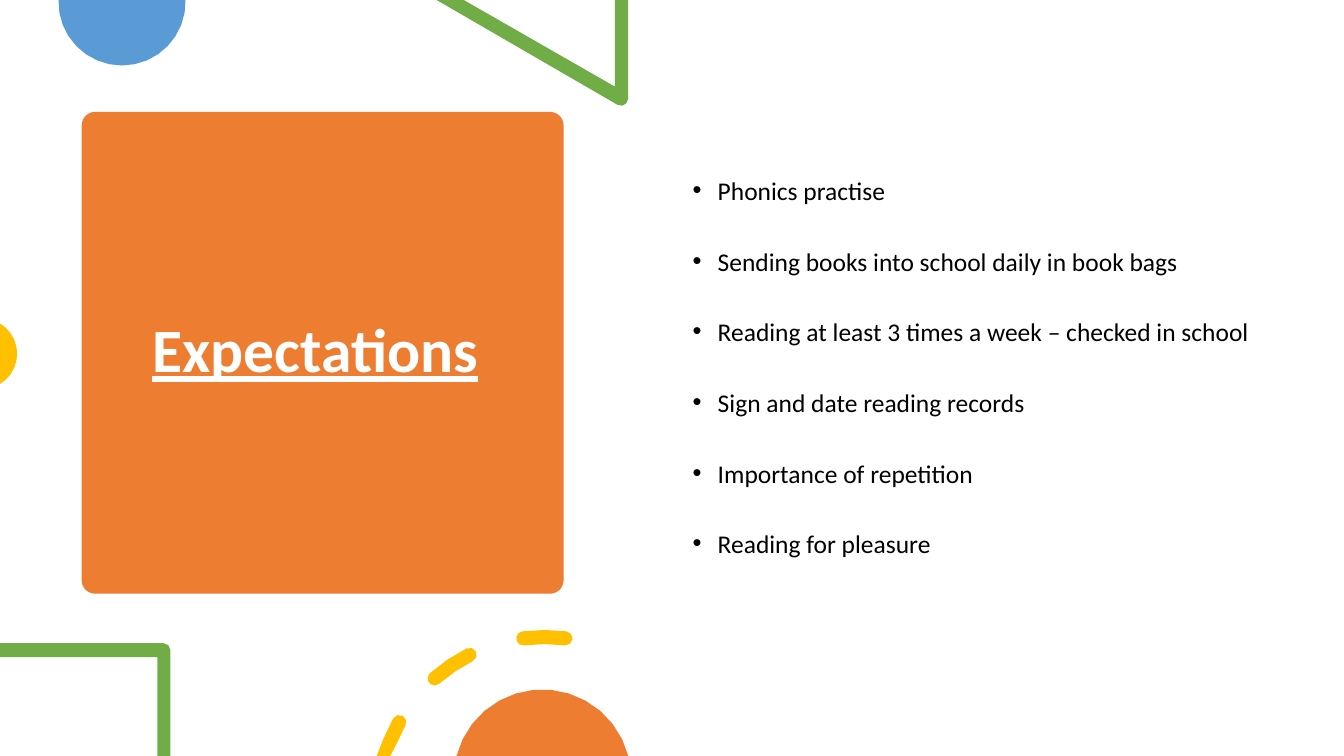
from math import ceil, cos, radians, sin

from lxml.etree import SubElement
from pptx import Presentation
from pptx.dml.color import RGBColor
from pptx.enum.shapes import MSO_SHAPE as Shape
from pptx.enum.text import MSO_ANCHOR as Anchor, PP_ALIGN as Align
from pptx.oxml.ns import qn
from pptx.util import Inches, Pt

WIDE, HIGH = 13.33, 7.5
BLUE, GREEN, GOLD, ORANGE = "5B9BD5", "70AD47", "FFC000", "ED7D31"
POINTS = [
    "Phonics practise",
    "Sending books into school daily in book bags",
    "Reading at least 3 times a week – checked in school",
    "Sign and date reading records",
    "Importance of repetition",
    "Reading for pleasure",
]


def paint(shape, color):
    """Give a shape a flat fill without line or shadow."""
    shape.shadow.inherit = False
    shape.fill.solid()
    shape.fill.fore_color.rgb = RGBColor.from_string(color)
    shape.line.fill.background()


def spot(x, y, r, angle):
    """Find the point on a circle at an angle in degrees clockwise from the right."""
    return x + r * cos(radians(angle)), y + r * sin(radians(angle))


def arc(x, y, r, start, end):
    """List points along a circle, closer together on a larger one."""
    steps = ceil(abs(end - start) / (12 if r > 0.1 else 45))
    return [spot(x, y, r, start + (end - start) * i / steps) for i in range(steps + 1)]


def outline(slide, dots, color):
    """Draw a closed outline through points, held inside the slide."""
    dots = [(Inches(max(x, 0)), Inches(min(max(y, 0), HIGH))) for x, y in dots]
    form = slide.shapes.build_freeform(*dots[0])
    form.add_line_segments(dots[1:], close=True)
    paint(form.convert_to_shape(), color)


def dash(slide, x, y, r, mid, half, thick):
    """Draw one round-ended dash of a ring, centred on an angle."""
    start, end, cap = mid - half, mid + half, thick / 2
    dots = arc(x, y, r + cap, start, end)
    dots += arc(*spot(x, y, r, end), cap, end, end + 180)
    dots += arc(x, y, r - cap, end, start)
    dots += arc(*spot(x, y, r, start), cap, start + 180, start + 360)
    outline(slide, dots, GOLD)


def decor(slide):
    """Draw the cut-off shapes around the slide's edges."""
    outline(slide, arc(1.21, 0.02, 0.63, -1.8, 181.8), BLUE)
    outline(slide, [(4.33, 0), (4.6, 0), (6.1, 0.86), (6.1, 0), (6.23, 0)]
            + arc(6.16, 0.98, 0.07, 0, 120), GREEN)
    outline(slide, arc(-0.18, 3.51, 0.35, -59, 59), GOLD)
    outline(slide, [(1.69, HIGH), (1.56, HIGH), (1.56, 6.52), (0, 6.52), (0, 6.38)]
            + arc(1.62, 6.45, 0.07, -90, 0), GREEN)
    for i in range(3):
        dash(slide, 5.4, 7.97, 1.65, 270 - 34 * i, 7.3, 0.14)
    outline(slide, arc(5.38, 7.72, 0.88, 194.5, 345.5), ORANGE)


def title(slide, x, y, size):
    """Draw the square title card."""
    card = slide.shapes.add_shape(Shape.ROUNDED_RECTANGLE, *map(Inches, (x, y, size, size)))
    card.adjustments[0] = 0.028
    paint(card, ORANGE)
    frame = card.text_frame
    frame.vertical_anchor = Anchor.MIDDLE
    frame.margin_right = Inches(0.24)
    para = frame.paragraphs[0]
    para.text = "Expectations"
    para.alignment = Align.CENTER
    para.line_spacing = 0.9
    font = para.font
    font.name, font.size, font.bold, font.underline = "Calibri", Pt(44), True, True
    font.color.rgb = RGBColor.from_string("FFFFFF")


def bullets(slide, x, y, w, h):
    """Write the evenly spaced bullet list."""
    frame = slide.shapes.add_textbox(*map(Inches, (x, y, w, h))).text_frame
    frame.word_wrap = True
    frame.margin_top = Inches(0.49)
    for i, text in enumerate(POINTS):
        para = frame.add_paragraph() if i else frame.paragraphs[0]
        para.text = text
        para.line_spacing = 0.7
        para.space_before = Pt(35.2 if i else 0)
        para.font.name, para.font.size = "Calibri", Pt(18.2)
        para.font.color.rgb = RGBColor.from_string("000000")
        props = para._p.get_or_add_pPr()
        props.set("marL", str(Inches(0.25)))
        props.set("indent", str(-Inches(0.25)))
        for tag, key, value in (("a:buFont", "typeface", "Arial"), ("a:buChar", "char", "•")):
            mark = SubElement(props, qn(tag))
            mark.set(key, value)
            props.insert_element_before(mark, "a:tabLst", "a:defRPr", "a:extLst")


def main():
    """Build and save the slide."""
    deck = Presentation()
    deck.slide_width, deck.slide_height = Inches(WIDE), Inches(HIGH)
    slide = deck.slides.add_slide(deck.slide_layouts[6])
    decor(slide)
    title(slide, 0.81, 1.11, 4.78)
    bullets(slide, 6.77, 1.33, 5.75, 5.35)
    deck.save("out.pptx")


if __name__ == "__main__":
    main()
